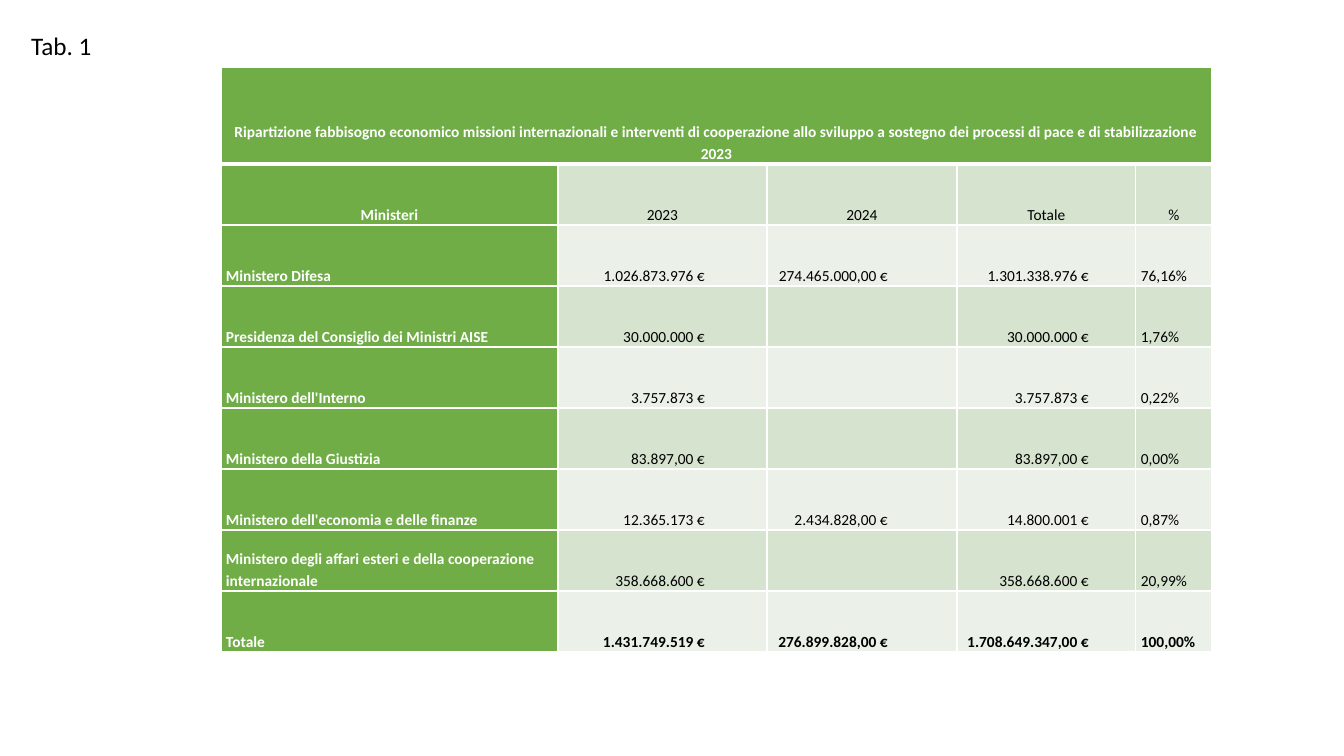
from dataclasses import dataclass

import pptx
from lxml import etree
from pptx import util as u
from pptx.dml.color import RGBColor
from pptx.enum import text
from pptx.oxml.ns import qn

EMU_PER_PX = 914400 / 100.8
FONT = "Calibri"
COLOURS = {"green": "70AD47", "band": "D5E3CF", "pale": "EBF1E9", "white": "FFFFFF", "black": "000000"}
CELL_MARGIN = 5
TITLE_HEIGHT, ROW_HEIGHT = 97, 61
TABLE_LEFT, TABLE_TOP = 221, 67

LEFT, CENTRE, RIGHT = text.PP_ALIGN.LEFT, text.PP_ALIGN.CENTER, text.PP_ALIGN.RIGHT


@dataclass(frozen=True)
class Column:
    heading: str
    width: int
    align: text.PP_ALIGN
    right_margin: int = CELL_MARGIN


COLUMNS = [
    Column("Ministeri", 337, LEFT),
    Column("2023", 209, RIGHT, 62),
    Column("2024", 190, RIGHT, 69),
    Column("Totale", 179, RIGHT, 47),
    Column("%", 76, LEFT),
]

TABLE_TITLE = (
    "Ripartizione fabbisogno economico missioni internazionali e interventi di cooperazione "
    "allo sviluppo a sostegno dei processi di pace e di stabilizzazione 2023"
)

MINISTRIES = [
    ("Ministero Difesa", "1.026.873.976 €", "274.465.000,00 €", "1.301.338.976 €", "76,16%"),
    ("Presidenza del Consiglio dei Ministri AISE", "30.000.000 €", "", "30.000.000 €", "1,76%"),
    ("Ministero dell'Interno", "3.757.873 €", "", "3.757.873 €", "0,22%"),
    ("Ministero della Giustizia", "83.897,00 €", "", "83.897,00 €", "0,00%"),
    ("Ministero dell'economia e delle finanze", "12.365.173 €", "2.434.828,00 €", "14.800.001 €", "0,87%"),
    ("Ministero degli affari esteri e della cooperazione internazionale",
     "358.668.600 €", "", "358.668.600 €", "20,99%"),
    ("Totale", "1.431.749.519 €", "276.899.828,00 €", "1.708.649.347,00 €", "100,00%"),
]


def px(length: int) -> u.Emu:
    return u.Emu(round(length * EMU_PER_PX))


def add_span(para, words: str, size: int, colour: str, bold: bool = False) -> None:
    span = para.add_run()
    span.text = words
    span.font.name = FONT
    span.font.size = u.Pt(size)
    span.font.bold = bold
    span.font.color.rgb = RGBColor.from_string(COLOURS[colour])


def set_borders(cell, bottom: int = 1) -> None:
    """Draw white cell borders, with the bottom width in points."""
    properties = cell._tc.get_or_add_tcPr()
    for index, (side, width) in enumerate([("L", 1), ("R", 1), ("T", 1), ("B", bottom)]):
        line = etree.Element(qn(f"a:ln{side}"), w=str(u.Pt(width)))
        fill = etree.SubElement(line, qn("a:solidFill"))
        etree.SubElement(fill, qn("a:srgbClr"), val=COLOURS["white"])
        properties.insert(index, line)


def fill_cell(cell, words: str, fill: str, align: text.PP_ALIGN, bold: bool,
              right_margin: int = CELL_MARGIN, bottom: int = 1) -> None:
    cell.fill.solid()
    cell.fill.fore_color.rgb = RGBColor.from_string(COLOURS[fill])
    set_borders(cell, bottom)
    cell.vertical_anchor = text.MSO_ANCHOR.BOTTOM
    cell.margin_left, cell.margin_right = px(CELL_MARGIN), px(right_margin)
    cell.margin_top = cell.margin_bottom = 0
    if words:
        para = cell.text_frame.paragraphs[0]
        para.alignment = align
        para.line_spacing = 1.15
        para.space_after = u.Pt(10)
        add_span(para, words, 11, "white" if fill == "green" else "black", bold)


def add_label(page) -> None:
    box = page.shapes.title
    box.left, box.top, box.width, box.height = px(21), px(25), px(165), px(41)
    frame = box.text_frame
    frame.word_wrap = True
    frame.auto_size = text.MSO_AUTO_SIZE.SHAPE_TO_FIT_TEXT
    frame.vertical_anchor = text.MSO_ANCHOR.TOP
    para = frame.paragraphs[0]
    para.alignment = LEFT
    add_span(para, "Tab. 1", 18, "black")


def add_budget_table(page) -> None:
    row_count = len(MINISTRIES) + 2
    width = sum(column.width for column in COLUMNS)
    height = TITLE_HEIGHT + ROW_HEIGHT * (row_count - 1)
    table = page.shapes.add_table(
        row_count, len(COLUMNS), px(TABLE_LEFT), px(TABLE_TOP), px(width), px(height)
    ).table
    table.first_row = table.horz_banding = False
    for index, row in enumerate(table.rows):
        row.height = px(ROW_HEIGHT if index else TITLE_HEIGHT)
    for index, column in enumerate(COLUMNS):
        table.columns[index].width = px(column.width)

    table.cell(0, 0).merge(table.cell(0, len(COLUMNS) - 1))
    for index in range(len(COLUMNS)):
        fill_cell(table.cell(0, index), "" if index else TABLE_TITLE, "green", CENTRE, True, bottom=3)
    for index, column in enumerate(COLUMNS):
        fill_cell(table.cell(1, index), column.heading, "band" if index else "green", CENTRE, index == 0)
    for row, values in enumerate(MINISTRIES, start=2):
        band = "band" if row % 2 else "pale"
        for index, (column, value) in enumerate(zip(COLUMNS, values)):
            bold = index == 0 or row == row_count - 1
            fill_cell(table.cell(row, index), value, band if index else "green",
                      column.align, bold, column.right_margin)


def main() -> None:
    deck = pptx.Presentation()
    deck.slide_width, deck.slide_height = px(1344), px(756)
    page = deck.slides.add_slide(deck.slide_layouts.get_by_name("Title Only"))
    add_budget_table(page)
    add_label(page)
    deck.save("out.pptx")


if __name__ == "__main__":
    main()
